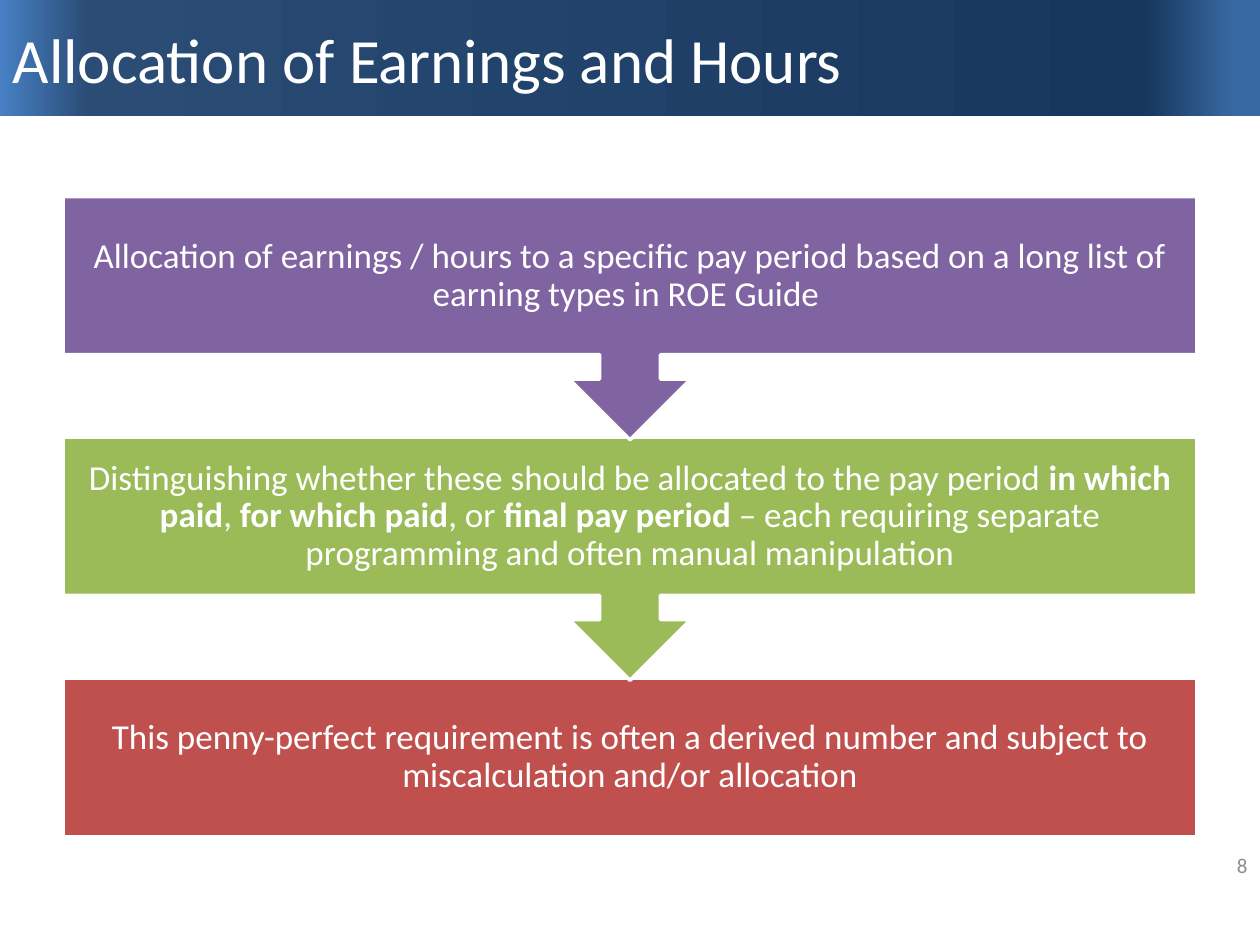
from dataclasses import dataclass

from lxml import etree
from pptx import Presentation
from pptx.dml.color import RGBColor
from pptx.enum.shapes import MSO_SHAPE
from pptx.enum.text import MSO_ANCHOR, PP_ALIGN
from pptx.oxml.ns import qn
from pptx.util import Inches, Pt

RECT = MSO_SHAPE.RECTANGLE
CALLOUT = MSO_SHAPE.UP_ARROW_CALLOUT
MIDDLE = MSO_ANCHOR.MIDDLE
LEFT, CENTER, RIGHT = PP_ALIGN.LEFT, PP_ALIGN.CENTER, PP_ALIGN.RIGHT


@dataclass(frozen=True)
class Theme:
    font: str = "Calibri"
    white: str = "FFFFFF"
    grey: str = "8C8C8C"
    purple: str = "8064A2"
    green: str = "9BBB59"
    red: str = "C0504D"
    band: tuple = ((2, "3969A2"), (9, "17375E"), (93, "2A4C75"), (100, "4780C5"))
    title_size: int = 36
    body_size: int = 20
    number_size: int = 12


class SlideBuilder:
    def __init__(self, slide, theme):
        self.s = slide
        self.theme = theme

    def style(self, p, size, color, align):
        p.alignment = align
        p.font.name = self.theme.font
        p.font.size = Pt(size)
        p.font.color.rgb = RGBColor.from_string(color)

    def shape(self, kind, x, y, w, h):
        sp = self.s.shapes.add_shape(kind, Inches(x), Inches(y), Inches(w), Inches(h))
        sp.shadow.inherit = False
        return sp

    def title_band(self, w, h):
        """Draw the gradient band behind everything else."""
        sp = self.shape(RECT, 0, 0, w, h)
        sp.line.fill.background()
        sp.fill.gradient()
        sp.fill.gradient_angle = 180
        stops = sp.fill.gradient_stops[0]._gs.getparent()
        for gs in list(stops):
            stops.remove(gs)
        for pos, color in self.theme.band:
            gs = etree.SubElement(stops, qn("a:gs"), pos=str(pos * 1000))
            etree.SubElement(gs, qn("a:srgbClr"), val=color)
        self.s.shapes._spTree.insert(2, sp._element)

    def title(self, text, w, h):
        sp = self.s.shapes.title
        sp.left, sp.top, sp.width, sp.height = 0, 0, Inches(w), Inches(h)
        tf = sp.text_frame
        tf.text = text
        tf.vertical_anchor = MIDDLE
        self.style(tf.paragraphs[0], self.theme.title_size, self.theme.white, LEFT)

    def block(self, kind, color, x, y, w, h):
        sp = self.shape(kind, x, y, w, h)
        sp.fill.solid()
        sp.fill.fore_color.rgb = RGBColor.from_string(color)
        sp.line.color.rgb = RGBColor.from_string(self.theme.white)
        sp.line.width = Pt(2)
        return sp

    def text(self, runs, x, y, w, h, size, color, align, inset=None):
        """Add one paragraph; runs alternate between regular and bold."""
        box = self.s.shapes.add_textbox(Inches(x), Inches(y), Inches(w), Inches(h))
        tf = box.text_frame
        tf.word_wrap = True
        tf.vertical_anchor = MIDDLE
        if inset is not None:
            tf.margin_left = tf.margin_right = Inches(inset)
            tf.margin_top = tf.margin_bottom = Inches(inset)
        p = tf.paragraphs[0]
        for i, content in enumerate(runs):
            r = p.add_run()
            r.text = content
            if i % 2:
                r.font.bold = True
        self.style(p, size, color, align)
        return p

    def step(self, runs, color, y, last):
        """Draw a step box, with a downward arrow unless it is the last."""
        x, w, box_h, arrow_h = 0.5, 9, 1.26, 1.93
        if last:
            self.block(RECT, color, x, y, w, box_h)
        else:
            self.block(CALLOUT, color, x, y, w, arrow_h).rotation = 180
        p = self.text(runs, x, y, w, box_h, self.theme.body_size,
                      self.theme.white, CENTER, inset=0.16)
        p.line_spacing = 0.9
        p.space_after = Pt(7)


def main():
    prs = Presentation()
    prs.slide_width, prs.slide_height = Inches(10), Inches(7.5)
    theme = Theme()
    slide = SlideBuilder(prs.slides.add_slide(prs.slide_layouts[5]), theme)

    slide.title_band(10, 0.92)
    slide.title("Allocation of Earnings and Hours", 10, 0.92)
    slide.text(["8"], 7.67, 6.67, 2.33, 0.4, theme.number_size, theme.grey, RIGHT)

    steps = [
        (theme.purple, ["Allocation of earnings / hours to a specific pay period "
                        "based on a long list of earning types in ROE Guide "]),
        (theme.green, ["Distinguishing whether these should be allocated to the pay period ",
                       "in which paid", ", ", "for which paid", ", or ", "final pay period",
                       " – each requiring separate programming and often manual manipulation"]),
        (theme.red, ["This penny-perfect requirement is often a derived number "
                     "and subject to miscalculation and/or allocation"]),
    ]
    top, pitch = 1.56, 1.91
    last = len(steps) - 1
    # Bottom step first, so that each arrow tip lies over the step below it.
    for i, (color, runs) in reversed(list(enumerate(steps))):
        slide.step(runs, color, top + i * pitch, i == last)

    prs.save("out.pptx")


if __name__ == "__main__":
    main()
